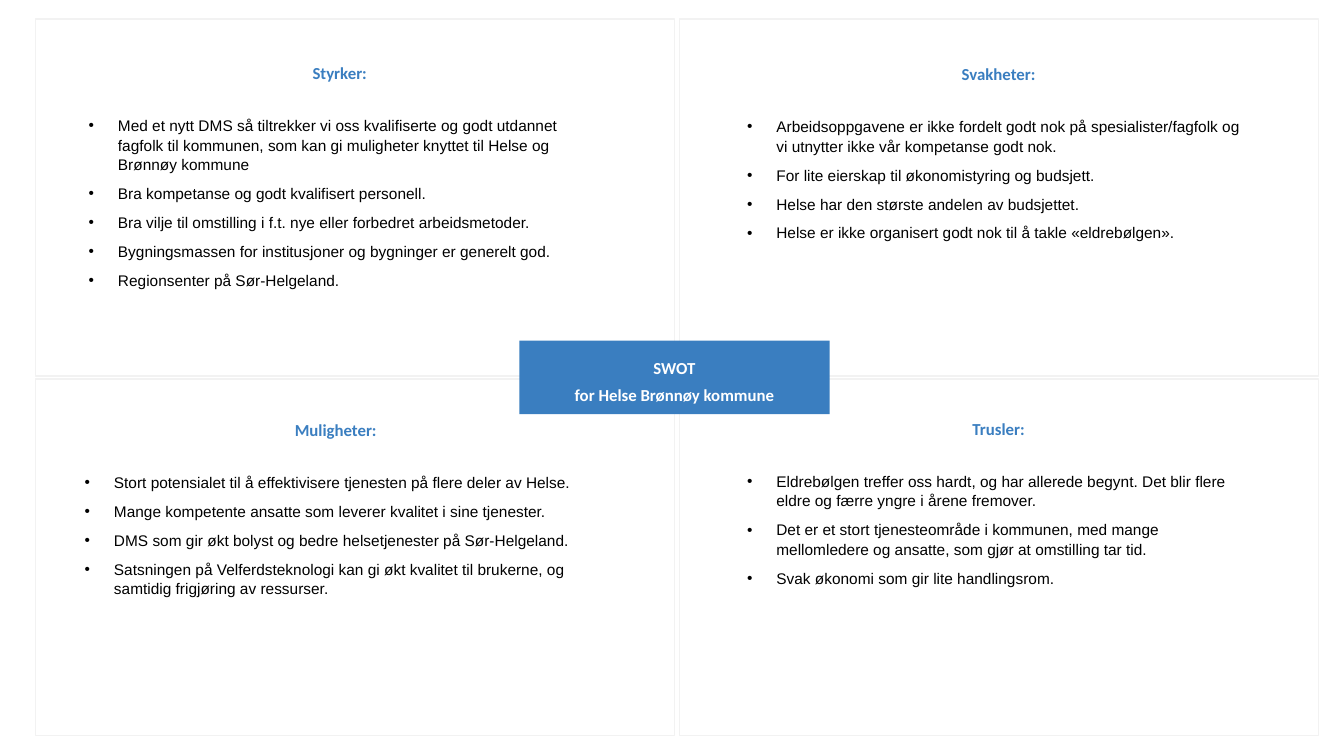
from lxml.etree import SubElement
from pptx import Presentation
from pptx.dml.color import RGBColor
from pptx.enum.shapes import MSO_SHAPE
from pptx.enum.text import MSO_ANCHOR, MSO_AUTO_SIZE, PP_ALIGN
from pptx.oxml.ns import qn
from pptx.util import Inches, Pt

BLUE, WHITE, BLACK, PANEL_LINE = "3A7EC0", "FFFFFF", "000000", "F2F2F2"
PANEL_WIDTH, PANEL_HEIGHT = 6.34, 3.54
PANEL_LEFT, PANEL_TOP = 0.35, 0.19
COLUMN_STEP, ROW_STEP = 6.39, 3.57
HANGING_INDENT = 0.29

QUADRANTS = [
    ("Styrker:", (0.78, 0.29, 5.18, 2.88), [
        "Med et nytt DMS så tiltrekker vi oss kvalifiserte og godt utdannet fagfolk til kommunen, "
        "som kan gi muligheter knyttet til Helse og Brønnøy kommune",
        "Bra kompetanse og godt kvalifisert personell.",
        "Bra vilje til omstilling i f.t. nye eller forbedret arbeidsmetoder.",
        "Bygningsmassen for institusjoner og bygninger er generelt god.",
        "Regionsenter på Sør-Helgeland.",
    ]),
    ("Svakheter:", (7.31, 0.3, 5.19, 2.1), [
        "Arbeidsoppgavene er ikke fordelt godt nok på spesialister/fagfolk og "
        "vi utnytter ikke vår kompetanse godt nok.",
        "For lite eierskap til økonomistyring og budsjett.",
        "Helse har den største andelen av budsjettet.",
        "Helse er ikke organisert godt nok til å takle «eldrebølgen».",
    ]),
    ("Muligheter:", (0.74, 3.83, 5.18, 2.62), [
        "Stort potensialet til å effektivisere tjenesten på flere deler av Helse.",
        "Mange kompetente ansatte som leverer kvalitet i sine tjenester.",
        "DMS som gir økt bolyst og bedre helsetjenester på Sør-Helgeland.",
        "Satsningen på Velferdsteknologi kan gi økt kvalitet til brukerne, og "
        "samtidig frigjøring av ressurser.",
    ]),
    ("Trusler:", (7.31, 3.82, 5.19, 2.53), [
        "Eldrebølgen treffer oss hardt, og har allerede begynt. "
        "Det blir flere eldre og færre yngre i årene fremover.",
        "Det er et stort tjenesteområde i kommunen, med mange mellomledere og ansatte, "
        "som gjør at omstilling tar tid.",
        "Svak økonomi som gir lite handlingsrom.",
    ]),
]


def color(value):
    """Turn a hex string into a colour."""
    return RGBColor.from_string(value)


def format_font(font, name, size, value, bold):
    """Set the typeface, size, colour and weight of a font."""
    font.name, font.size, font.bold = name, Pt(size), bold
    font.color.rgb = color(value)


def place(placeholder, box):
    """Move a placeholder to a box in inches and bring it to the front."""
    left, top, width, height = map(Inches, box)
    placeholder.left, placeholder.top = left, top
    placeholder.width, placeholder.height = width, height
    placeholder.element.getparent().append(placeholder.element)


def add_panel(slide, box):
    """Draw the outlined background of one quadrant."""
    panel = slide.shapes.add_shape(MSO_SHAPE.RECTANGLE, *map(Inches, box))
    panel.shadow.inherit = False
    panel.fill.solid()
    panel.fill.fore_color.rgb = color(WHITE)
    panel.line.color.rgb = color(PANEL_LINE)
    panel.line.width = Pt(1)


def format_bullet(paragraph):
    """Give a paragraph a hanging round bullet and list spacing."""
    properties = paragraph._p.get_or_add_pPr()
    properties.set("marL", str(Inches(HANGING_INDENT)))
    properties.set("indent", str(-Inches(HANGING_INDENT)))
    SubElement(properties, qn("a:buFont")).set("typeface", "Arial")
    SubElement(properties, qn("a:buChar")).set("char", "•")
    paragraph.alignment = PP_ALIGN.LEFT
    paragraph.line_spacing = 1.05
    paragraph.space_before = paragraph.space_after = Pt(3.4)


def fill_quadrant(placeholder, box, heading, points):
    """Write a centred heading and its bullet list in a placeholder."""
    place(placeholder, box)
    frame = placeholder.text_frame
    frame.text = "\n".join([heading, *points])
    frame.word_wrap = True
    frame.auto_size = MSO_AUTO_SIZE.NONE
    frame.vertical_anchor = MSO_ANCHOR.TOP
    frame.margin_top = Inches(0.33)
    title, *bullets = frame.paragraphs
    properties = title._p.get_or_add_pPr()
    properties.set("marL", "0")
    properties.set("indent", "0")
    SubElement(properties, qn("a:buNone"))
    title.alignment = PP_ALIGN.CENTER
    title.space_before, title.space_after = Pt(0), Pt(20)
    format_font(title.runs[0].font, "Calibri", 12, BLUE, True)
    for bullet in bullets:
        format_bullet(bullet)
        format_font(bullet.runs[0].font, "Arial", 11, BLACK, False)


def fill_badge(title, box):
    """Turn the title placeholder into the rounded badge in the middle."""
    place(title, box)
    geometry = SubElement(title.element.spPr, qn("a:prstGeom"), prst="roundRect")
    SubElement(geometry, qn("a:avLst"))
    title.fill.solid()
    title.fill.fore_color.rgb = color(BLUE)
    frame = title.text_frame
    frame.text = "SWOT\nfor Helse Brønnøy kommune"
    frame.word_wrap = False
    frame.auto_size = MSO_AUTO_SIZE.NONE
    frame.vertical_anchor = MSO_ANCHOR.MIDDLE
    frame.margin_left = frame.margin_right = 0
    for paragraph in frame.paragraphs:
        paragraph.alignment = PP_ALIGN.CENTER
        paragraph.space_before = Pt(0)
        paragraph.line_spacing = Pt(19.5)
        format_font(paragraph.runs[0].font, "Calibri", 12, WHITE, True)


def build_swot(presentation):
    """Add the slide with four quadrants around a central badge."""
    slide = presentation.slides.add_slide(presentation.slide_layouts.get_by_name("Comparison"))
    title, *bodies = list(slide.placeholders)
    for index in range(len(QUADRANTS)):
        row, column = divmod(index, 2)
        add_panel(slide, (PANEL_LEFT + column * COLUMN_STEP, PANEL_TOP + row * ROW_STEP,
                          PANEL_WIDTH, PANEL_HEIGHT))
    fill_badge(title, (5.15, 3.38, 3.08, 0.73))
    for body, (heading, box, points) in zip(bodies, QUADRANTS):
        fill_quadrant(body, box, heading, points)


def main():
    """Build and save the presentation."""
    presentation = Presentation()
    presentation.slide_width, presentation.slide_height = Inches(13.33), Inches(7.5)
    build_swot(presentation)
    presentation.save("out.pptx")


if __name__ == "__main__":
    main()
